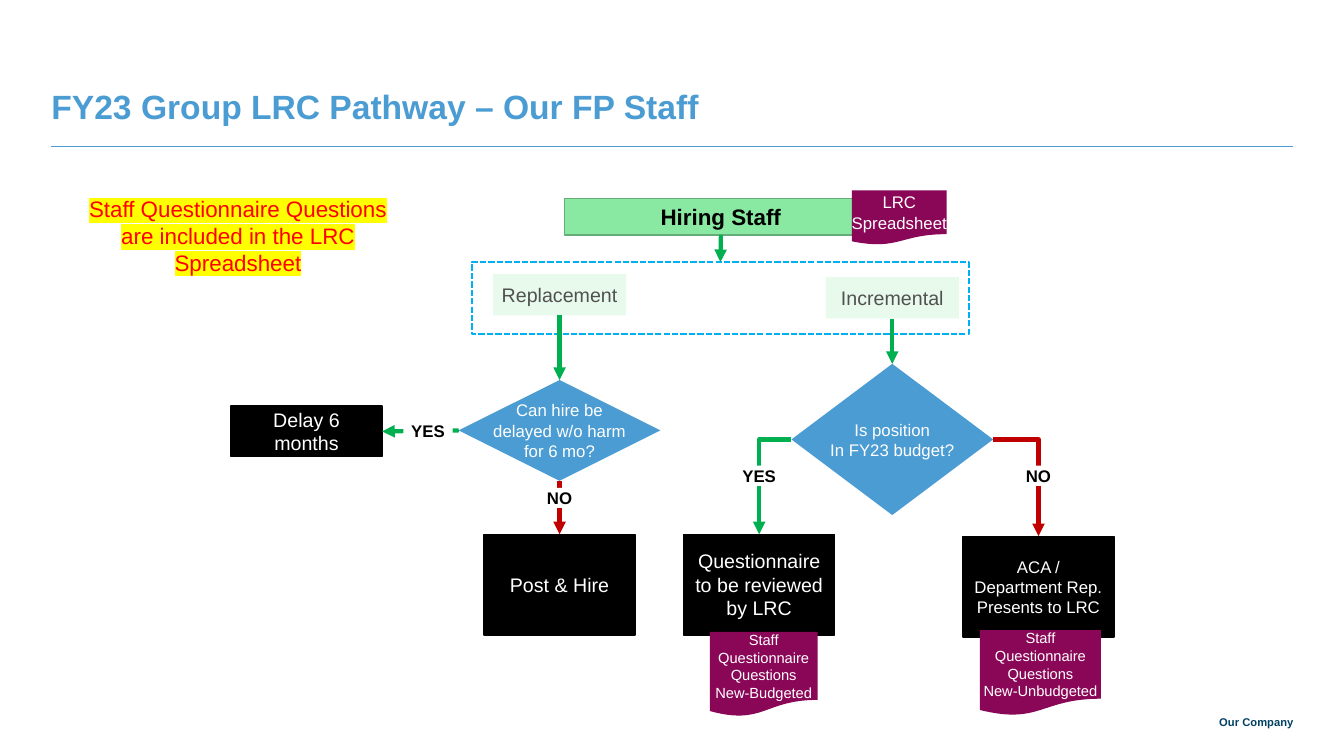
from lxml import etree
from pptx import Presentation
from pptx import util as u
from pptx.dml.color import RGBColor
from pptx.enum import dml, shapes, text
from pptx.oxml import ns

# Content: style, left, top, width, height, lines of text
NODES = {
    "start": ("start", 5.6, 1.97, 3.1, 0.36, ["Hiring Staff"]),
    "types": ("frame", 4.68, 2.6, 4.93, 0.71, []),
    "replacement": ("type", 4.89, 2.72, 1.32, 0.41, ["Replacement"]),
    "incremental": ("type", 8.19, 2.75, 1.32, 0.41, ["Incremental"]),
    "can_delay": ("decision", 4.55, 3.77, 2, 1,
                  ["Can hire be", "delayed w/o harm", "for 6 mo?"]),
    "in_budget": ("decision", 7.85, 3.61, 2, 1.5,
                  ["Is position", "In FY23 budget?"]),
    "delay": ("step", 2.29, 4.03, 1.5, 0.5, ["Delay 6 months"]),
    "post": ("step", 4.8, 5.3, 1.5, 1, ["Post & Hire"]),
    "review": ("step", 6.78, 5.3, 1.5, 1, ["Questionnaire to be reviewed by LRC"]),
    "present": ("small_step", 9.55, 5.32, 1.5, 1,
                ["ACA / Department Rep.", "Presents to LRC"]),
}
TOP, LEFT, BOTTOM, RIGHT = range(4)
LINKS = [  # from, side, to, side, colour, bent
    ("start", BOTTOM, "types", TOP, "yes", False),
    ("replacement", BOTTOM, "can_delay", TOP, "yes", False),
    ("incremental", BOTTOM, "in_budget", TOP, "yes", False),
    ("can_delay", LEFT, "delay", RIGHT, "yes", False),
    ("can_delay", BOTTOM, "post", TOP, "no", False),
    ("in_budget", LEFT, "review", TOP, "yes", True),
    ("in_budget", RIGHT, "present", TOP, "no", True),
]
OVERLAYS = [
    ("answer", 4, 4.17, 0.49, 0.2, ["YES"]),
    ("answer", 5.2, 4.84, 0.7, 0.2, ["NO"]),
    ("answer", 7.18, 4.62, 0.7, 0.2, ["YES"]),
    ("answer", 9.95, 4.62, 0.7, 0.2, ["NO"]),
    ("form", 7.04, 6.27, 1.07, 0.84,
     ["Staff", "Questionnaire", "Questions", "New-Budgeted"]),
    ("form", 9.72, 6.25, 1.2, 0.85,
     ["Staff", "Questionnaire", "Questions", "New-Unbudgeted"]),
    ("big_form", 8.45, 1.89, 0.94, 0.54, ["LRC", "Spreadsheet"]),
]
TEXTS = [
    ("title", 0.51, 0.46, 12.31, 0.79, ["FY23 Group LRC Pathway – Our FP Staff"]),
    ("note", 0.82, 1.94, 3.08, 0.88,
     ["Staff Questionnaire Questions are included in the LRC Spreadsheet"]),
    ("footer", 11.19, 7, 1.64, 0.23, ["Our Company"]),
]

# Theme
S, A, V = shapes.MSO_SHAPE, text.PP_ALIGN, text.MSO_ANCHOR
STEP = dict(shape=S.FLOWCHART_PROCESS, fill="000000", line="000000",
            size=14, color="FFFFFF", wrap=True)
FORM = dict(shape=S.FLOWCHART_DOCUMENT, fill="8A0758", size=10.5, color="FFFFFF")
THEME = {
    "font": "Arial", "yes": "00B050", "no": "C00000", "rule": "4B9CD3",
    "start": dict(STEP, fill="89E8A2", line="65AC78", size=16,
                  color="000000", bold=True),
    "frame": dict(shape=S.RECTANGLE, line="00B0F0", weight=1.5, dash=True),
    "type": dict(shape=S.RECTANGLE, fill="E7FAEC", size=14, color="515151"),
    "decision": dict(shape=S.FLOWCHART_DECISION, fill="4B9CD3",
                     size=12, color="FFFFFF"),
    "step": STEP,
    "small_step": dict(STEP, size=12),
    "answer": dict(shape=S.RECTANGLE, fill="FFFFFF", size=12,
                   color="000000", bold=True),
    "form": FORM,
    "big_form": dict(FORM, size=12),
    "title": dict(size=24, color="4B9CD3", bold=True, align=A.LEFT,
                  anchor=V.BOTTOM, spacing=28, wrap=True),
    "note": dict(size=16, color="FF0000", highlight="FFFF00",
                 anchor=V.TOP, wrap=True),
    "footer": dict(size=8, color="004163", bold=True, align=A.RIGHT,
                   anchor=V.BOTTOM, wrap=True),
}


def rgb(value):
    return RGBColor.from_string(value)


def write(tf, lines, style):
    tf.word_wrap = style.get("wrap", False)
    tf.vertical_anchor = style.get("anchor", V.MIDDLE)
    for i, line in enumerate(lines):
        p = tf.add_paragraph() if i else tf.paragraphs[0]
        p.alignment = style.get("align", A.CENTER)
        if "spacing" in style:
            p.line_spacing = u.Pt(style["spacing"])
        r = p.add_run()
        r.text = line
        r.font.name = THEME["font"]
        r.font.size = u.Pt(style["size"])
        r.font.bold = style.get("bold", False)
        r.font.color.rgb = rgb(style["color"])
        if "highlight" in style:
            mark = etree.Element(ns.qn("a:highlight"))
            etree.SubElement(mark, ns.qn("a:srgbClr"), val=style["highlight"])
            r.font.fill._xPr.find(ns.qn("a:solidFill")).addnext(mark)


def add_box(s, kind, x, y, w, h, lines):
    style = THEME[kind]
    sp = s.shapes.add_shape(style["shape"], *map(u.Inches, (x, y, w, h)))
    sp.shadow.inherit = False
    if "fill" in style:
        sp.fill.solid()
        sp.fill.fore_color.rgb = rgb(style["fill"])
    else:
        sp.fill.background()
    if "line" in style:
        sp.line.color.rgb = rgb(style["line"])
        sp.line.width = u.Pt(style.get("weight", 1))
    else:
        sp.line.fill.background()
    if style.get("dash"):
        sp.line.dash_style = dml.MSO_LINE.SQUARE_DOT
    write(sp.text_frame, lines, style)
    return sp


def add_text(s, kind, x, y, w, h, lines):
    tf = s.shapes.add_textbox(*map(u.Inches, (x, y, w, h))).text_frame
    tf.margin_left = tf.margin_top = tf.margin_right = tf.margin_bottom = 0
    write(tf, lines, THEME[kind])


def add_line(s, ends, color, weight, bent=False):
    kind = shapes.MSO_CONNECTOR.ELBOW if bent else shapes.MSO_CONNECTOR.STRAIGHT
    line = s.shapes.add_connector(kind, *map(u.Inches, ends))
    line.line.color.rgb = rgb(color)
    line.line.width = u.Pt(weight)
    spPr = line._element.spPr
    etree.SubElement(spPr, ns.qn("a:effectLst"))
    if bent:  # one corner only
        spPr.find(ns.qn("a:prstGeom")).set("prst", "bentConnector2")
    return line


def side_point(name, side):
    x, y, w, h = NODES[name][1:5]
    dx, dy = [(0.5, 0), (0, 0.5), (0.5, 1), (1, 0.5)][side]
    return x + w * dx, y + h * dy


def main():
    prs = Presentation()
    prs.slide_width, prs.slide_height = u.Inches(13.33), u.Inches(7.5)
    s = prs.slides.add_slide(prs.slide_layouts[6])

    # Title, note, footer and rule
    for item in TEXTS:
        add_text(s, *item)
    add_line(s, (0.51, 1.45, 12.82, 1.45), THEME["rule"], 0.5)

    # Flowchart boxes
    boxes = {name: add_box(s, *node) for name, node in NODES.items()}

    # Arrows
    for start, out, end, into, color, bent in LINKS:
        ends = side_point(start, out) + side_point(end, into)
        arrow = add_line(s, ends, THEME[color], 3, bent)
        arrow.begin_connect(boxes[start], out)
        arrow.end_connect(boxes[end], into)
        etree.SubElement(arrow.line._get_or_add_ln(), ns.qn("a:tailEnd"),
                         type="triangle")

    # Answers and forms on top
    for item in OVERLAYS:
        add_box(s, *item)

    prs.save("out.pptx")


if __name__ == "__main__":
    main()
